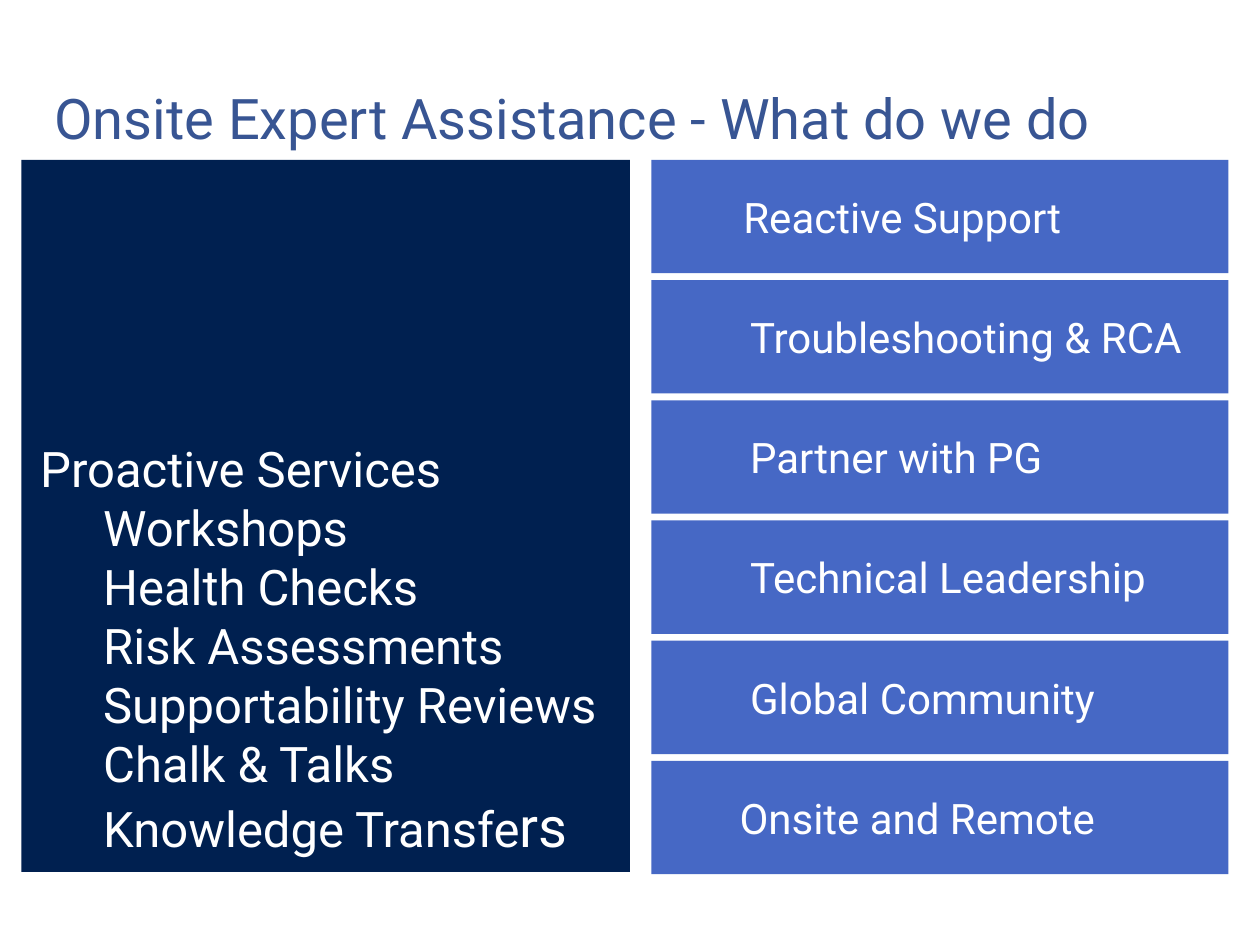
from dataclasses import dataclass

from lxml import etree
from pptx import Presentation
from pptx.dml.color import RGBColor
from pptx.enum.shapes import MSO_SHAPE
from pptx.enum.text import MSO_ANCHOR, MSO_AUTO_SIZE, PP_ALIGN
from pptx.oxml.ns import qn
from pptx.util import Pt

RECTANGLE = MSO_SHAPE.RECTANGLE
MIDDLE, BOTTOM = MSO_ANCHOR.MIDDLE, MSO_ANCHOR.BOTTOM
LEFT = PP_ALIGN.LEFT
NO_FIT = MSO_AUTO_SIZE.NONE


@dataclass(frozen=True)
class Theme:
    font: str = "Roboto"
    title: RGBColor = RGBColor(0x38, 0x55, 0x93)
    panel: RGBColor = RGBColor(0x00, 0x20, 0x50)
    tile: RGBColor = RGBColor(0x46, 0x68, 0xC5)
    light: RGBColor = RGBColor(0xFF, 0xFF, 0xFF)
    title_size: float = 32
    list_size: float = 28
    tile_size: float = 24
    accent_size: float = 32


@dataclass(frozen=True)
class Tile:
    text: str
    indent: float


THEME = Theme()
TOP = 91.4
TILE_LEFT, TILE_WIDTH, TILE_HEIGHT, TILE_PITCH = 372.2, 329.8, 64.8, 68.68

TILES = [
    Tile("Reactive Support", 52.6),
    Tile("Troubleshooting & RCA", 56.4),
    Tile("Partner with PG", 56.4),
    Tile("Technical Leadership", 56.4),
    Tile("Global Community", 56.4),
    Tile("Onsite and Remote", 50.4),
]
SERVICES = ["Workshops", "Health Checks", "Risk Assessments",
            "Supportability Reviews", "Chalk & Talks", "Knowledge Transfe"]


def apply(target, formats: dict) -> None:
    for name, value in formats.items():
        setattr(target, name, value)


def place(box, left: float, top: float, width: float, height: float) -> None:
    apply(box, {"left": Pt(left), "top": Pt(top),
                "width": Pt(width), "height": Pt(height)})


def set_frame(box, anchor, side: float, edge: float) -> None:
    apply(box.text_frame, {
        "word_wrap": True, "auto_size": NO_FIT, "vertical_anchor": anchor,
        "margin_left": Pt(side), "margin_right": Pt(side),
        "margin_top": Pt(edge), "margin_bottom": Pt(edge)})


def add_span(para, text: str, size: float, color: RGBColor) -> None:
    span = para.add_run()
    span.text = text
    apply(span.font, {"name": THEME.font, "size": Pt(size), "bold": False})
    span.font.color.rgb = color


def format_para(para, indent: float = 0) -> None:
    apply(para, {"alignment": LEFT, "line_spacing": 1.0,
                 "space_before": Pt(0), "space_after": Pt(0)})
    properties = para._p.get_or_add_pPr()
    properties.set("marL", str(Pt(indent)))
    properties.set("indent", "0")
    etree.SubElement(properties, qn("a:buNone"))


def fill_solid(box, color: RGBColor) -> None:
    box.fill.solid()
    box.fill.fore_color.rgb = color
    box.line.fill.background()


def draw_title(box) -> None:
    place(box, 23.8, 17.3, 671.8, 72.7)
    set_frame(box, BOTTOM, 7.2, 3.6)
    para = box.text_frame.paragraphs[0]
    format_para(para)
    add_span(para, "Onsite Expert Assistance - What do we do",
             THEME.title_size, THEME.title)


def draw_services(box) -> None:
    place(box, 12.2, TOP, 347.8, 406.8)
    fill_solid(box, THEME.panel)
    set_frame(box, BOTTOM, 10.8, 7.2)
    para = box.text_frame.paragraphs[0]
    format_para(para)
    add_span(para, "Proactive Services", THEME.list_size, THEME.light)
    for service in SERVICES:
        para = box.text_frame.add_paragraph()
        para.level = 1
        format_para(para, indent=36)
        add_span(para, service, THEME.list_size, THEME.light)
    # The last word ends in larger letters
    add_span(para, "rs", THEME.accent_size, THEME.light)


def draw_tile(page, tile: Tile, row: int) -> None:
    box = page.shapes.add_shape(
        RECTANGLE, Pt(TILE_LEFT), Pt(TOP + row * TILE_PITCH),
        Pt(TILE_WIDTH), Pt(TILE_HEIGHT))
    box.shadow.inherit = False
    fill_solid(box, THEME.tile)
    set_frame(box, MIDDLE, 0, 2.2)
    para = box.text_frame.paragraphs[0]
    format_para(para, tile.indent)
    add_span(para, tile.text, THEME.tile_size, THEME.light)


def main() -> None:
    deck = Presentation()
    apply(deck, {"slide_width": Pt(720), "slide_height": Pt(540)})
    page = deck.slides.add_slide(deck.slide_layouts[1])

    # Heading and list of services
    draw_title(page.shapes.title)
    draw_services(page.placeholders[1])

    # Column of tiles
    for row, tile in enumerate(TILES):
        draw_tile(page, tile, row)

    deck.save("out.pptx")


if __name__ == "__main__":
    main()
